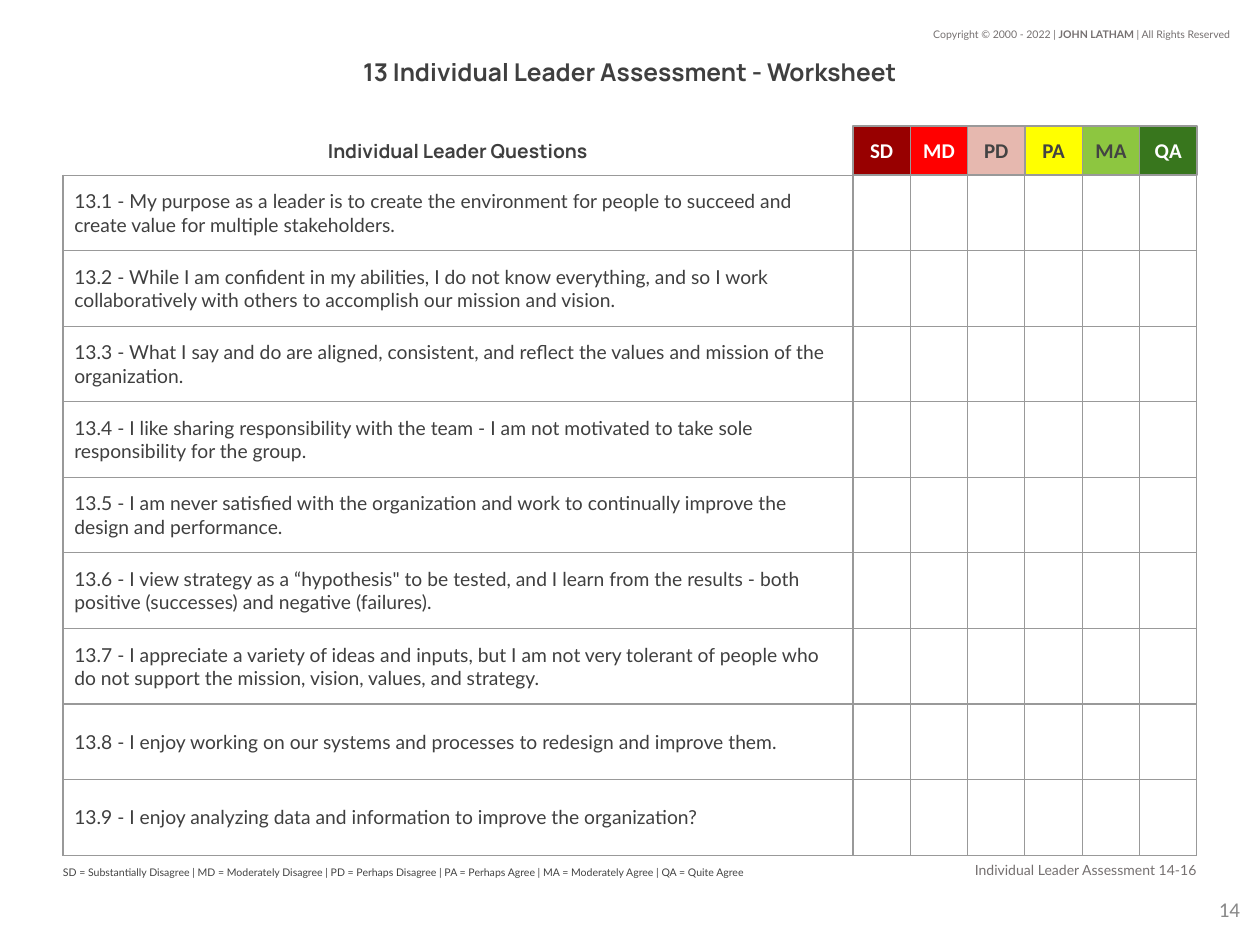
from lxml import etree
from pptx import Presentation
from pptx.dml.color import RGBColor
from pptx.enum.shapes import MSO_SHAPE
from pptx.enum.text import MSO_ANCHOR, PP_ALIGN
from pptx.oxml.ns import qn
from pptx.util import Inches, Pt

LEFT, MID, RIGHT = PP_ALIGN.LEFT, PP_ALIGN.CENTER, PP_ALIGN.RIGHT
TOP, CENTER = MSO_ANCHOR.TOP, MSO_ANCHOR.MIDDLE
RECT = MSO_SHAPE.RECTANGLE
INK, SOFT, DARK, WHITE, RULE = "3F3F3F", "757070", "434343", "FFFFFF", "999999"
PAD = (0.1, 0.1, 0.1, 0.1)

# text, box, size, font, colour, bold, alignment, insets
LABELS = [
    ("14", (9.34, 6.93, 0.6, 0.57), 12, "Calibri", "888888", False, RIGHT, PAD),
    ("Individual Leader Questions", (0.5, 1, 6.27, 0.39), 11, "Manrope", INK,
     True, MID, PAD),
    ("Individual Leader Assessment 14-16", (6.77, 6.8, 2.73, 0.21), 8, "Lato",
     SOFT, False, RIGHT, (0.1, 0.1, 0, 0.1)),
    ("13 Individual Leader Assessment - Worksheet", (0.5, 0.42, 9, 0.3), 14,
     "Manrope", INK, True, MID, PAD),
    ("SD = Substantially Disagree | MD = Moderately Disagree | "
     "PD = Perhaps Disagree | PA = Perhaps Agree | "
     "MA = Moderately Agree | QA = Quite Agree", (0.5, 6.78, 6.27, 0.28), 6,
     "Lato", DARK, False, LEFT, (0, 0.1, 0.1, 0.1)),
]
COPY = [("Copyright © 2000 - 2022 | ", False), ("JOHN LATHAM ", True),
        ("| All Rights Reserved", False)]
SCALE = [("SD", "980000", WHITE), ("MD", "FF0000", WHITE),
         ("PD", "E6B8AF", DARK), ("PA", "FFFF00", DARK),
         ("MA", "8DC640", DARK), ("QA", "38761D", WHITE)]
ITEMS = [
    "My purpose as a leader is to create the environment for people to succeed "
    "and create value for multiple stakeholders.",
    "While I am confident in my abilities, I do not know everything, and so I "
    "work collaboratively with others to accomplish our mission and vision.",
    "What I say and do are aligned, consistent, and reflect the values and "
    "mission of the organization.",
    "I like sharing responsibility with the team - I am not motivated to take "
    "sole responsibility for the group.",
    "I am never satisfied with the organization and work to continually improve "
    "the design and performance.",
    "I view strategy as a “hypothesis\" to be tested, and I learn from the "
    "results - both positive (successes) and negative (failures).",
    "I appreciate a variety of ideas and inputs, but I am not very tolerant of "
    "people who do not support the mission, vision, values, and strategy.",
    "I enjoy working on our systems and processes to redesign and improve them.",
    "I enjoy analyzing data and information to improve the organization?",
]
X, Y, WIDE, HIGH = 0.5, 1.39, 9, 0.6
ASK = 6.27
STEP = (WIDE - ASK) / len(SCALE)


def color(code):
    return RGBColor.from_string(code)


def style(run, size, face, ink, bold=False):
    font = run.font
    font.size, font.name, font.bold = Pt(size), face, bold
    font.color.rgb = color(ink)


def set_pad(box, pad):
    """Set left, top, right and bottom insets of a text frame or cell."""
    sides = ("margin_left", "margin_top", "margin_right", "margin_bottom")
    for side, gap in zip(sides, pad):
        setattr(box, side, Inches(gap))


def add_box(slide, place, pad, anchor=CENTER):
    frame = slide.shapes.add_textbox(*map(Inches, place)).text_frame
    frame.word_wrap = True
    frame.vertical_anchor = anchor
    set_pad(frame, pad)
    return frame


def add_label(slide, text, place, size, face, ink, bold, align, pad):
    para = add_box(slide, place, pad).paragraphs[0]
    para.text = text
    para.alignment = align
    style(para.runs[0], size, face, ink, bold)


def add_copy(slide):
    frame = add_box(slide, (7.28, 0.17, 2.58, 0.2), (0.1, 0.05, 0.1, 0.05), TOP)
    para = frame.paragraphs[0]
    para.alignment = RIGHT
    for text, bold in COPY:
        run = para.add_run()
        run.text = text
        style(run, 6, "Lato", SOFT, bold)


def add_grade(slide, col, text, fill, ink):
    place = (X + ASK + col * STEP, 1, STEP, Y - 1)
    shape = slide.shapes.add_shape(RECT, *map(Inches, place))
    shape.shadow.inherit = False
    shape.fill.solid()
    shape.fill.fore_color.rgb = color(fill)
    shape.line.color.rgb = color(RULE)
    shape.line.width = Pt(0.75)
    frame = shape.text_frame
    frame.word_wrap = False
    frame.vertical_anchor = CENTER
    set_pad(frame, PAD)
    para = frame.paragraphs[0]
    para.text = text
    para.alignment = MID
    style(para.runs[0], 12, "Calibri", ink, True)


def add_rules(cell):
    """Draw the four borders of a table cell."""
    props = cell._tc.get_or_add_tcPr()
    for spot, tag in enumerate(("a:lnL", "a:lnR", "a:lnT", "a:lnB")):
        line = etree.Element(qn(tag), w=str(Pt(0.75)))
        fill = etree.SubElement(line, qn("a:solidFill"))
        etree.SubElement(fill, qn("a:srgbClr"), val=RULE)
        props.insert(spot, line)


def add_grid(slide):
    rows, cols = len(ITEMS), len(SCALE) + 1
    place = (X, Y, WIDE, HIGH * rows)
    table = slide.shapes.add_table(rows, cols, *map(Inches, place)).table
    table.first_row = table.horz_banding = False
    for num, col in enumerate(table.columns):
        col.width = Inches(STEP if num else ASK)
    for cell in table.iter_cells():
        cell.fill.background()
        cell.vertical_anchor = CENTER
        set_pad(cell, (0.09,) * 4)
        add_rules(cell)
    for row, text in enumerate(ITEMS):
        para = table.cell(row, 0).text_frame.paragraphs[0]
        para.text = f"13.{row + 1} - {text}"
        style(para.runs[0], 11, "Lato", INK)


def main():
    deck = Presentation()
    deck.slide_width, deck.slide_height = Inches(10), Inches(7.5)
    slide = deck.slides.add_slide(deck.slide_layouts[6])
    add_copy(slide)
    add_grid(slide)
    for col, grade in enumerate(SCALE):
        add_grade(slide, col, *grade)
    for label in LABELS:
        add_label(slide, *label)
    deck.save("out.pptx")


if __name__ == "__main__":
    main()
